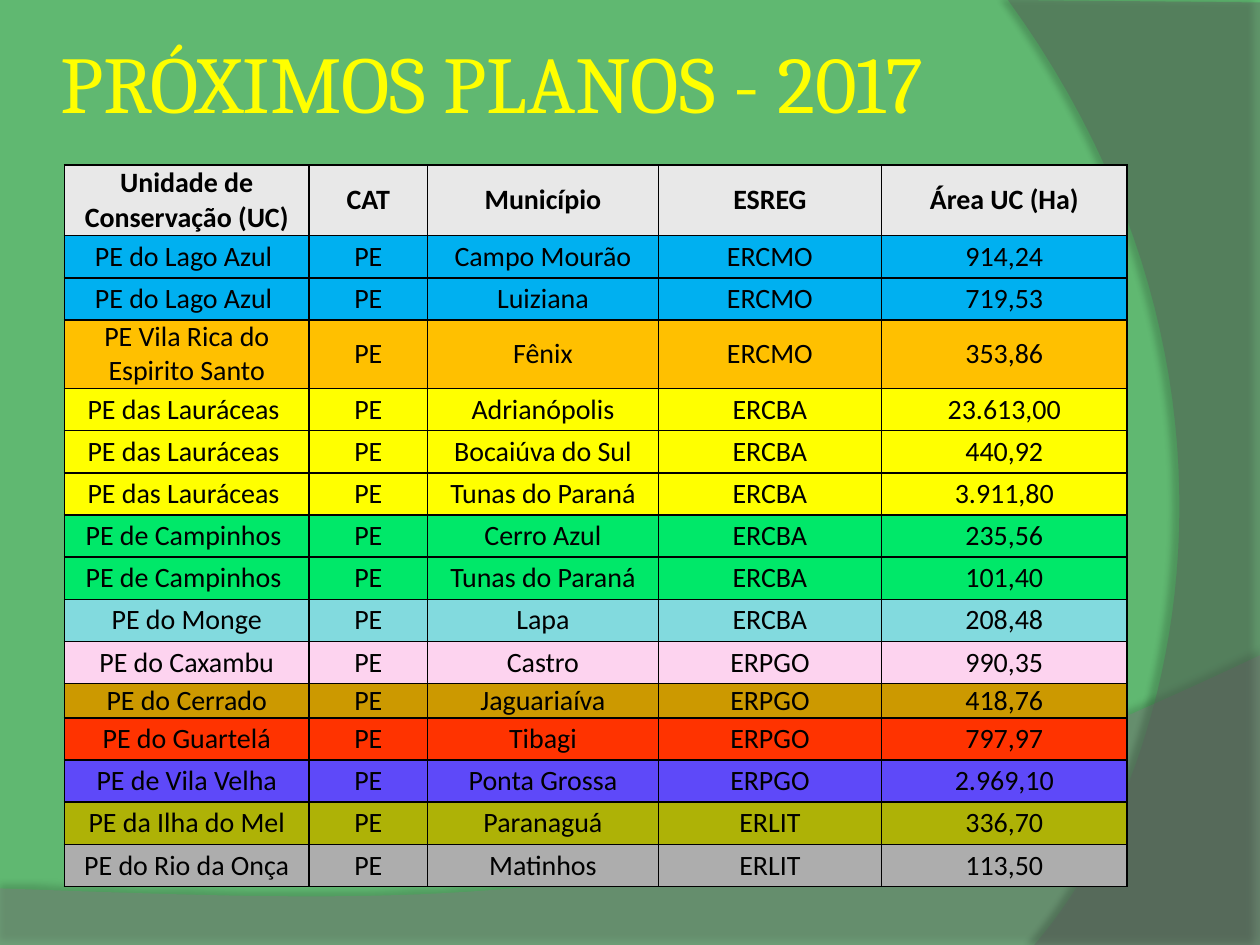
from dataclasses import dataclass

from lxml.etree import SubElement
from pptx import Presentation
from pptx.dml.color import RGBColor
from pptx.enum.text import MSO_ANCHOR, PP_ALIGN
from pptx.oxml.ns import qn
from pptx.slide import Slide
from pptx.util import Cm, Pt

BLACK = RGBColor(0x00, 0x00, 0x00)
YELLOW = RGBColor(0xFF, 0xFF, 0x00)
LEAF_GREEN = RGBColor(0x60, 0xB8, 0x71)
MID_GREY = RGBColor(0x7F, 0x7F, 0x7F)
DARK_GREY = RGBColor(0x5E, 0x5E, 0x5E)
HEADER_GREY = RGBColor(0xE8, 0xE8, 0xE8)
BLUE = RGBColor(0x00, 0xB0, 0xF0)
ORANGE = RGBColor(0xFF, 0xC0, 0x00)
GREEN = RGBColor(0x00, 0xE8, 0x69)
AQUA = RGBColor(0x82, 0xDA, 0xDE)
PINK = RGBColor(0xFD, 0xD3, 0xEF)
BROWN = RGBColor(0xCC, 0x99, 0x00)
RED = RGBColor(0xFF, 0x33, 0x00)
VIOLET = RGBColor(0x5E, 0x49, 0xF9)
OLIVE = RGBColor(0xAE, 0xB2, 0x06)
SILVER = RGBColor(0xAD, 0xAD, 0xAD)

Point = tuple[float, float]
COLUMN_WIDTHS = (4.93, 2.39, 4.65, 4.5, 4.95)
ROW_HEIGHT = 0.85
CURVE_STEPS = 48
NO_MARGINS = dict.fromkeys(
    ("margin_left", "margin_right", "margin_top", "margin_bottom"), 0
)
CELL_FORMAT = {**NO_MARGINS, "vertical_anchor": MSO_ANCHOR.MIDDLE}
TITLE_FORMAT = {
    **dict.fromkeys(NO_MARGINS, Cm(0.13)),
    "vertical_anchor": MSO_ANCHOR.MIDDLE,
    "word_wrap": True,
}


@dataclass(frozen=True)
class Wave:
    curve: tuple[Point, Point, Point, Point]
    corners: tuple[Point, ...]
    color: RGBColor
    opacity: int
    shadow_opacity: int
    shadow_distance: float
    shadow_angle: int


@dataclass(frozen=True)
class Row:
    texts: tuple[str, ...]
    color: RGBColor
    height: float = ROW_HEIGHT
    bold: bool = False


def park(name: str, town: str, office: str, area: str, color: RGBColor,
         height: float = ROW_HEIGHT) -> Row:
    return Row((name, "PE", town, office, area), color, height)


WAVES = (
    Wave(((25.4, 13.21), (14.2, 18.52), (9.93, 18.26), (0, 17.91)),
         ((0, 19.05), (25.4, 19.05)), MID_GREY, 45, 35, 3.5, 270),
    Wave(((20.85, 19.05), (23.75, 15.72), (25.86, 7.62), (20.32, 0)),
         ((25.4, 0.05), (25.4, 19.05)), DARK_GREY, 40, 45, 4, 180),
)

ROWS = (
    Row(("Unidade de Conservação (UC)", "CAT", "Município", "ESREG",
         "Área UC (Ha)"), HEADER_GREY, 1.42, True),
    park("PE do Lago Azul ", "Campo Mourão", "ERCMO", "914,24", BLUE),
    park("PE do Lago Azul ", "Luiziana", "ERCMO", "719,53", BLUE),
    park("PE Vila Rica do Espirito Santo", "Fênix", "ERCMO", "353,86", ORANGE, 1.14),
    park("PE das Lauráceas ", "Adrianópolis", "ERCBA", "23.613,00", YELLOW),
    park("PE das Lauráceas ", "Bocaiúva do Sul", "ERCBA", "440,92", YELLOW),
    park("PE das Lauráceas ", "Tunas do Paraná", "ERCBA", "3.911,80", YELLOW),
    park("PE de Campinhos ", "Cerro Azul", "ERCBA", "235,56", GREEN),
    park("PE de Campinhos ", "Tunas do Paraná", "ERCBA", "101,40", GREEN),
    park("PE do Monge", "Lapa", "ERCBA", "208,48", AQUA),
    park("PE do Caxambu", "Castro", "ERPGO", "990,35", PINK),
    park("PE do Cerrado", "Jaguariaíva", "ERPGO", "418,76", BROWN, 0.56),
    park("PE do Guartelá", "Tibagi", "ERPGO", "797,97", RED),
    park("PE de Vila Velha", "Ponta Grossa", "ERPGO", "2.969,10", VIOLET),
    park("PE da Ilha do Mel", "Paranaguá", "ERLIT", "336,70", OLIVE),
    park("PE do Rio da Onça", "Matinhos", "ERLIT", "113,50", SILVER),
)


def apply_format(target, values: dict) -> None:
    for name, value in values.items():
        setattr(target, name, value)


def write_text(para, text: str, color: RGBColor, values: dict) -> None:
    span = para.add_run()
    span.text = text
    span.font.color.rgb = color
    apply_format(span.font, values)


def add_color(parent, color: RGBColor, opacity: int = 100) -> None:
    element = SubElement(parent, qn("a:srgbClr"), val=str(color))
    SubElement(element, qn("a:alpha"), val=str(opacity * 1000))


def curve_point(curve: tuple[Point, ...], t: float) -> Point:
    weights = ((1 - t) ** 3, 3 * t * (1 - t) ** 2, 3 * t**2 * (1 - t), t**3)
    x, y = (
        sum(weight * point[axis] for weight, point in zip(weights, curve))
        for axis in (0, 1)
    )
    return Cm(x), Cm(y)


def draw_wave(page: Slide, wave: Wave) -> None:
    outline = [curve_point(wave.curve, step / CURVE_STEPS)
               for step in range(CURVE_STEPS + 1)]
    outline += [(Cm(x), Cm(y)) for x, y in wave.corners]
    builder = page.shapes.build_freeform(*outline[0])
    builder.add_line_segments(outline[1:], close=True)
    shape = builder.convert_to_shape()
    shape.shadow.inherit = False
    shape.line.fill.background()
    shape.fill.solid()
    shape.fill.fore_color.rgb = wave.color
    properties = shape.element.spPr
    fill_color = properties.find(qn("a:solidFill")).find(qn("a:srgbClr"))
    SubElement(fill_color, qn("a:alpha"), val=str(wave.opacity * 1000))
    shadow = SubElement(
        properties.find(qn("a:effectLst")), qn("a:outerShdw"),
        blurRad=str(Pt(4)), dist=str(Pt(wave.shadow_distance)),
        dir=str(wave.shadow_angle * 60000), rotWithShape="0",
    )
    add_color(shadow, BLACK, wave.shadow_opacity)


def draw_cell(cell, text: str, row: Row) -> None:
    apply_format(cell, CELL_FORMAT)
    properties = cell._tc.get_or_add_tcPr()
    for side in ("lnL", "lnR", "lnT", "lnB"):
        border = SubElement(properties, qn(f"a:{side}"), w=str(Pt(1)))
        add_color(SubElement(border, qn("a:solidFill")), BLACK)
    cell.fill.solid()
    cell.fill.fore_color.rgb = row.color
    para = cell.text_frame.paragraphs[0]
    para.alignment = PP_ALIGN.CENTER
    write_text(para, text, BLACK,
               {"name": "Calibri", "size": Pt(16), "bold": row.bold})


def draw_table(page: Slide, rows: tuple[Row, ...]) -> None:
    table = page.shapes.add_table(
        len(rows), len(COLUMN_WIDTHS), Cm(1.3), Cm(3.33),
        Cm(sum(COLUMN_WIDTHS)), Cm(sum(row.height for row in rows)),
    ).table
    apply_format(table, {"first_row": False, "horz_banding": False})
    for column, width in zip(table.columns, COLUMN_WIDTHS):
        column.width = Cm(width)
    for table_row, row in zip(table.rows, rows):
        table_row.height = Cm(row.height)
        for cell, text in zip(table_row.cells, row.texts):
            draw_cell(cell, text, row)


def draw_title(page: Slide, text: str) -> None:
    box = page.shapes.add_textbox(Cm(1.09), Cm(0.05), Cm(20.75), Cm(3.18))
    apply_format(box.text_frame, TITLE_FORMAT)
    write_text(box.text_frame.paragraphs[0], text, YELLOW,
               {"name": "Cambria", "size": Pt(46)})


def main() -> None:
    deck = Presentation()
    apply_format(deck, {"slide_width": Cm(25.4), "slide_height": Cm(19.05)})
    page = deck.slides.add_slide(deck.slide_layouts[6])
    page.background.fill.solid()
    page.background.fill.fore_color.rgb = LEAF_GREEN
    for wave in WAVES:
        draw_wave(page, wave)
    draw_table(page, ROWS)
    draw_title(page, "PRÓXIMOS PLANOS - 2017")
    deck.save("out.pptx")


if __name__ == "__main__":
    main()
